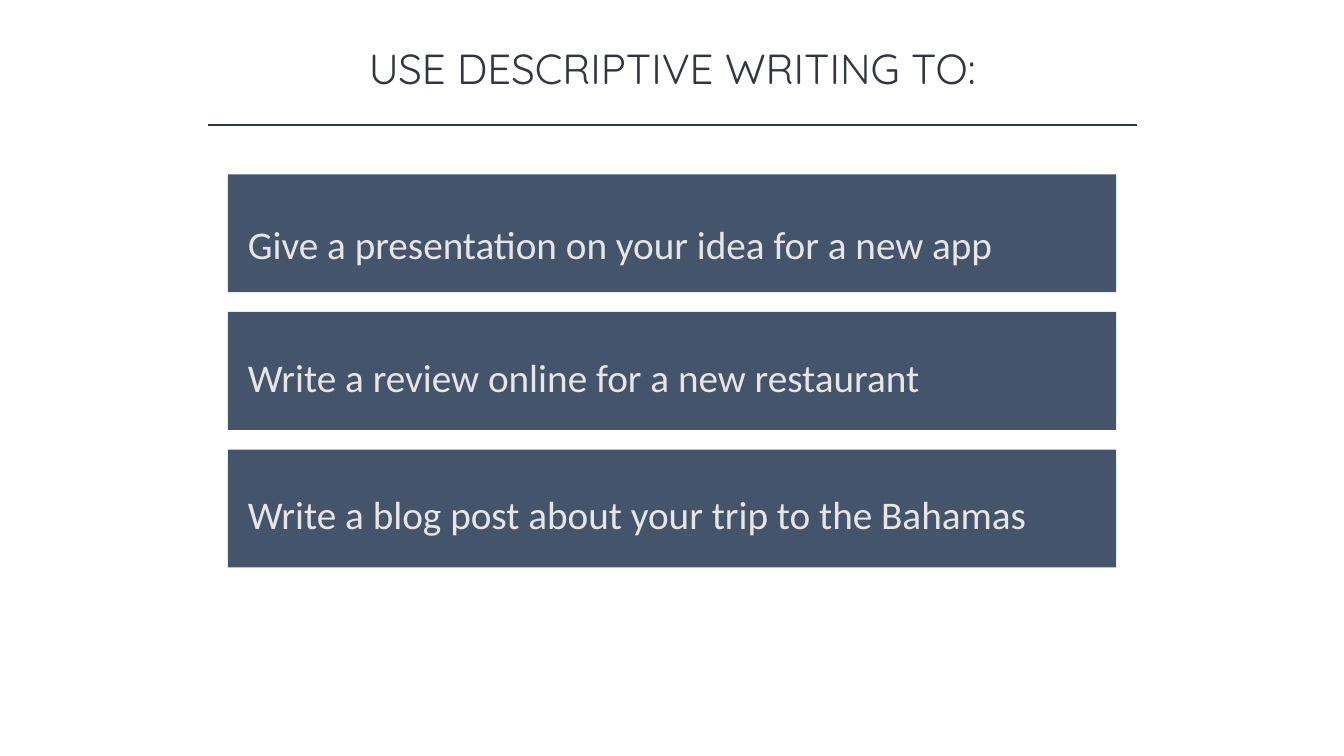
from pptx import Presentation, util as u
from pptx.dml.color import RGBColor
from pptx.enum import shapes, text
from pptx.oxml.ns import qn
from lxml import etree

INK, SLATE, PALE = "323542", "44546A", "E7E6E6"


def color(code):
    return RGBColor.from_string(code)


class Board:
    """Holds the text styles and the current slide."""

    title = {"name": "Quicksand", "size": u.Pt(30)}
    body = {"name": "Calibri", "size": u.Pt(28)}

    def __init__(self, deck):
        self.slide = deck.slides.add_slide(deck.slide_layouts[6])

    def letter(self, shape, words, style, ink, align):
        frame = shape.text_frame
        layout = {"word_wrap": True, "vertical_anchor": text.MSO_ANCHOR.TOP,
                  "auto_size": text.MSO_AUTO_SIZE.SHAPE_TO_FIT_TEXT}
        for key, value in layout.items():
            setattr(frame, key, value)
        para = frame.paragraphs[0]
        para.alignment = align
        run = para.add_run()
        run.text = words
        for key, value in style.items():
            setattr(run.font, key, value)
        run.font.color.rgb = color(ink)

    def head(self, words, *box):
        shape = self.slide.shapes.add_textbox(*map(u.Inches, box))
        self.letter(shape, words, self.title, INK, text.PP_ALIGN.CENTER)

    def rule(self, *ends):
        line = self.slide.shapes.add_connector(
            shapes.MSO_CONNECTOR.STRAIGHT, *map(u.Inches, ends))
        line.line.color.rgb = color(INK)
        line.line.width = u.Pt(1)
        etree.SubElement(line._element.spPr, qn("a:effectLst"))

    def block(self, group, *box):
        shape = group.shapes.add_shape(
            shapes.MSO_SHAPE.RECTANGLE, *map(u.Inches, box))
        shape.shadow.inherit = False
        shape.fill.solid()
        shape.fill.fore_color.rgb = color(SLATE)
        shape.line.fill.background()
        return shape

    def bar(self, words, top, drop):
        group = self.slide.shapes.add_group_shape()
        self.block(group, 2.26, top, 8.81, 1.17)
        label = self.block(group, 2.36, top + drop, 8.54, 0.57)
        self.letter(label, words, self.body, PALE, text.PP_ALIGN.LEFT)


def main():
    deck = Presentation()
    deck.slide_width, deck.slide_height = u.Inches(13.33), u.Inches(7.5)
    board = Board(deck)

    # Title and rule
    board.head("USE DESCRIPTIVE WRITING TO:", 1.67, 0.37, 10, 0.61)
    board.rule(2.06, 1.24, 11.28, 1.24)

    # Bars, evenly spaced; each label sits a set drop below its bar's top
    uses = [("Give a presentation on your idea for a new app", 0.41),
            ("Write a review online for a new restaurant", 0.36),
            ("Write a blog post about your trip to the Bahamas", 0.36)]
    first, last = 1.73, 4.46
    step = (last - first) / (len(uses) - 1)
    for i, (words, drop) in enumerate(uses):
        board.bar(words, first + i * step, drop)

    deck.save("out.pptx")


if __name__ == "__main__":
    main()
